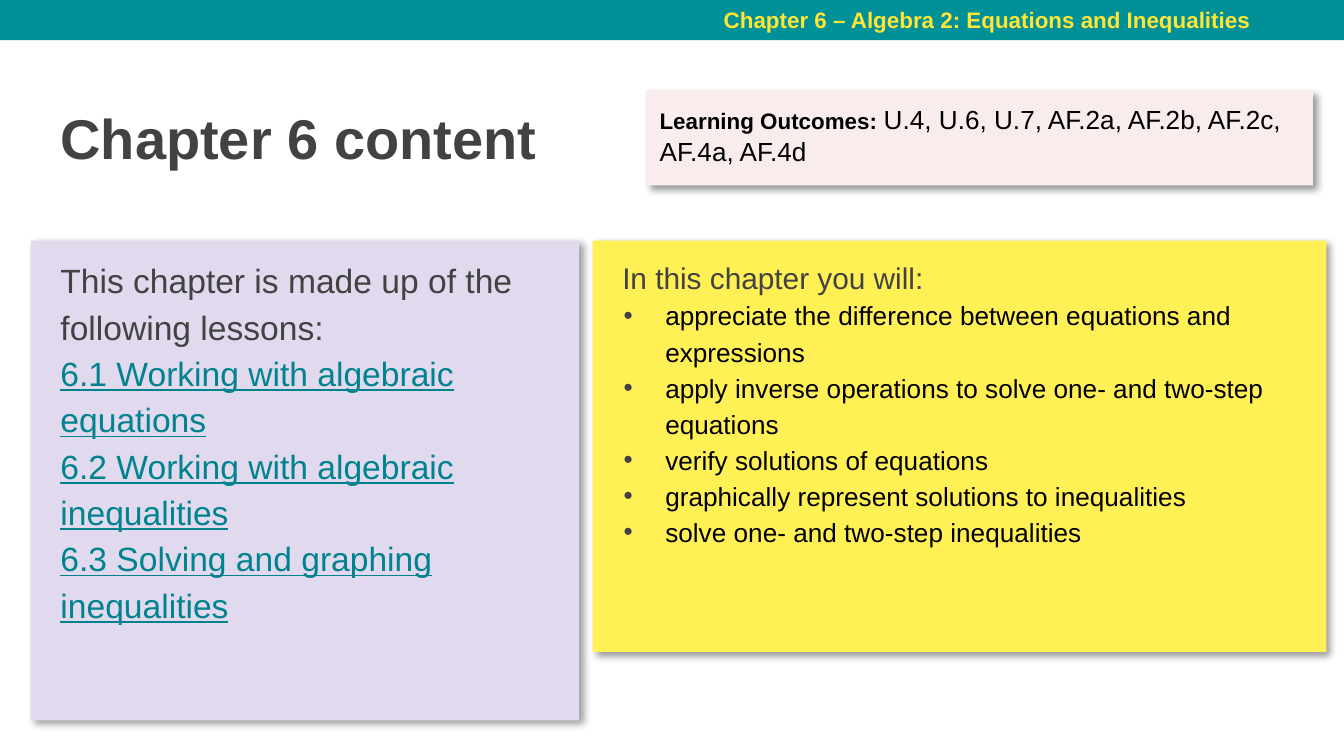
from dataclasses import dataclass
from lxml.etree import SubElement
from pptx import Presentation
from pptx.dml.color import RGBColor
from pptx.enum.shapes import MSO_SHAPE
from pptx.enum.text import MSO_ANCHOR, MSO_AUTO_SIZE, PP_ALIGN
from pptx.oxml.ns import qn
from pptx.util import Inches, Pt

# Content
CHAPTER = "Chapter 6 – Algebra 2: Equations and Inequalities"
TITLE = "Chapter 6 content"
OUTCOMES = ("Learning Outcomes: ", "U.4, U.6, U.7, AF.2a, AF.2b, AF.2c, AF.4a, AF.4d")
LESSONS_INTRO = "This chapter is made up of the following lessons:"
LESSONS = [
    "6.1 Working with algebraic equations",
    "6.2 Working with algebraic inequalities",
    "6.3 Solving and graphing inequalities",
]
GOALS_INTRO = "In this chapter you will:"
GOALS = [
    "appreciate the difference between equations and expressions",
    "apply inverse operations to solve one- and two-step equations",
    "verify solutions of equations",
    "graphically represent solutions to inequalities",
    "solve one- and two-step inequalities",
]


@dataclass(frozen=True)
class Theme:
    font: str = "Arial"
    teal: str = "009198"
    link: str = "00838F"
    gold: str = "FFE535"
    grey: str = "424242"
    black: str = "000000"
    lilac: str = "E1DAEE"
    pink: str = "F8ECEC"
    yellow: str = "FFF056"
    title: int = 30
    lesson: int = 18
    intro: int = 16
    body: int = 14
    label: int = 12


T = Theme()

# Layout: a 16:9 slide in two rows, with panels sharing the lower row
W = 10
H = W * 9 / 16
BAR_H = 0.3
HEAD_Y, HEAD_H = 0.67, 0.71
PANEL_Y = 1.79
LEFT_X, LEFT_W, GAP = 0.23, 4.08, 0.1
RIGHT_X = LEFT_X + LEFT_W + GAP
RIGHT_EDGE = 9.87
LABEL_X, LABEL_Y, OUTCOMES_X = 4.82, -0.01, 4.81
INDENT, BULLET_INDENT, HANGING = 0.12, 0.44, -0.31


def place(sp, x, y, w, h):
    sp.left, sp.top, sp.width, sp.height = (Inches(v) for v in (x, y, w, h))


def frame(sp, anchor=MSO_ANCHOR.TOP):
    tf = sp.text_frame
    tf.word_wrap, tf.auto_size, tf.vertical_anchor = True, MSO_AUTO_SIZE.NONE, anchor
    tf.margin_left = tf.margin_right = tf.margin_top = tf.margin_bottom = Inches(0.1)
    return tf


def fill(sp, color):
    """Fill a shape flat, with neither line nor shadow."""
    sp.fill.solid()
    sp.fill.fore_color.rgb = RGBColor.from_string(color)
    sp.line.fill.background()
    sp.shadow.inherit = False


def panel(sp, color):
    """Fill a borderless panel and give it a soft shadow."""
    fill(sp, color)
    effects = sp._element.spPr.find(qn("a:effectLst"))
    shadow = SubElement(effects, qn("a:outerShdw"), blurRad=str(Pt(4)),
                        dist=str(Pt(3)), dir=str(45 * 60000), algn="bl", rotWithShape="0")
    clr = SubElement(shadow, qn("a:srgbClr"), val=T.black)
    SubElement(clr, qn("a:alpha"), val="40000")


def paragraph(tf, first=False, align=PP_ALIGN.LEFT, spacing=1.0, indent=0, bullet=None):
    p = tf.paragraphs[0] if first else tf.add_paragraph()
    p.alignment, p.line_spacing = align, spacing
    p.space_before = p.space_after = Pt(0)
    pPr = p._p.get_or_add_pPr()
    pPr.set("marL", str(Inches(indent)))
    pPr.set("indent", str(Inches(HANGING if bullet else 0)))
    if bullet:
        clr = SubElement(pPr, qn("a:buClr"))
        SubElement(clr, qn("a:srgbClr"), val=T.grey)
        SubElement(pPr, qn("a:buFont"), typeface=T.font)
        SubElement(pPr, qn("a:buChar"), char=bullet)
    else:
        SubElement(pPr, qn("a:buNone"))
    return p


def add_text(p, text, size=T.body, color=T.black, bold=False, underline=False):
    r = p.add_run()
    r.text = text
    f = r.font
    f.name, f.size, f.bold, f.underline = T.font, Pt(size), bold, underline
    f.color.rgb = RGBColor.from_string(color)


def add_list(tf, intro, items, intro_size, indent, bullet=None, **style):
    p = paragraph(tf, first=True, spacing=1.15, indent=INDENT)
    add_text(p, intro, size=intro_size, color=T.grey)
    for item in items:
        p = paragraph(tf, spacing=1.15, indent=indent, bullet=bullet)
        add_text(p, item, **style)


prs = Presentation()
prs.slide_width, prs.slide_height = Inches(W), Inches(H)
s = prs.slides.add_slide(prs.slide_layouts.get_by_name("Two Content"))
title, lessons, goals = s.placeholders

# Chapter bar
bar = s.shapes.add_shape(MSO_SHAPE.RECTANGLE, 0, 0, Inches(W), Inches(BAR_H))
fill(bar, T.teal)
label = s.shapes.add_textbox(0, 0, 0, 0)
place(label, LABEL_X, LABEL_Y, RIGHT_EDGE - LABEL_X, BAR_H - LABEL_Y)
p = paragraph(frame(label, MSO_ANCHOR.MIDDLE), first=True, align=PP_ALIGN.CENTER)
add_text(p, CHAPTER, size=T.label, color=T.gold, bold=True)

# Title
place(title, 0.35, HEAD_Y, 9.32, HEAD_H)
p = paragraph(frame(title), first=True)
add_text(p, TITLE, size=T.title, color=T.grey, bold=True)

# Learning outcomes
outcomes = s.shapes.add_shape(MSO_SHAPE.RECTANGLE, 0, 0, 0, 0)
place(outcomes, OUTCOMES_X, HEAD_Y, 4.96, HEAD_H)
panel(outcomes, T.pink)
p = paragraph(frame(outcomes), first=True)
add_text(p, OUTCOMES[0], size=T.label, bold=True)
add_text(p, OUTCOMES[1])

# Lessons
place(lessons, LEFT_X, PANEL_Y, LEFT_W, 3.57)
panel(lessons, T.lilac)
add_list(frame(lessons), LESSONS_INTRO, LESSONS, T.lesson, INDENT,
         size=T.lesson, color=T.link, underline=True)

# Goals
place(goals, RIGHT_X, PANEL_Y, RIGHT_EDGE - RIGHT_X, 3.06)
panel(goals, T.yellow)
add_list(frame(goals), GOALS_INTRO, GOALS, T.intro, BULLET_INDENT, bullet="•")

prs.save("out.pptx")
